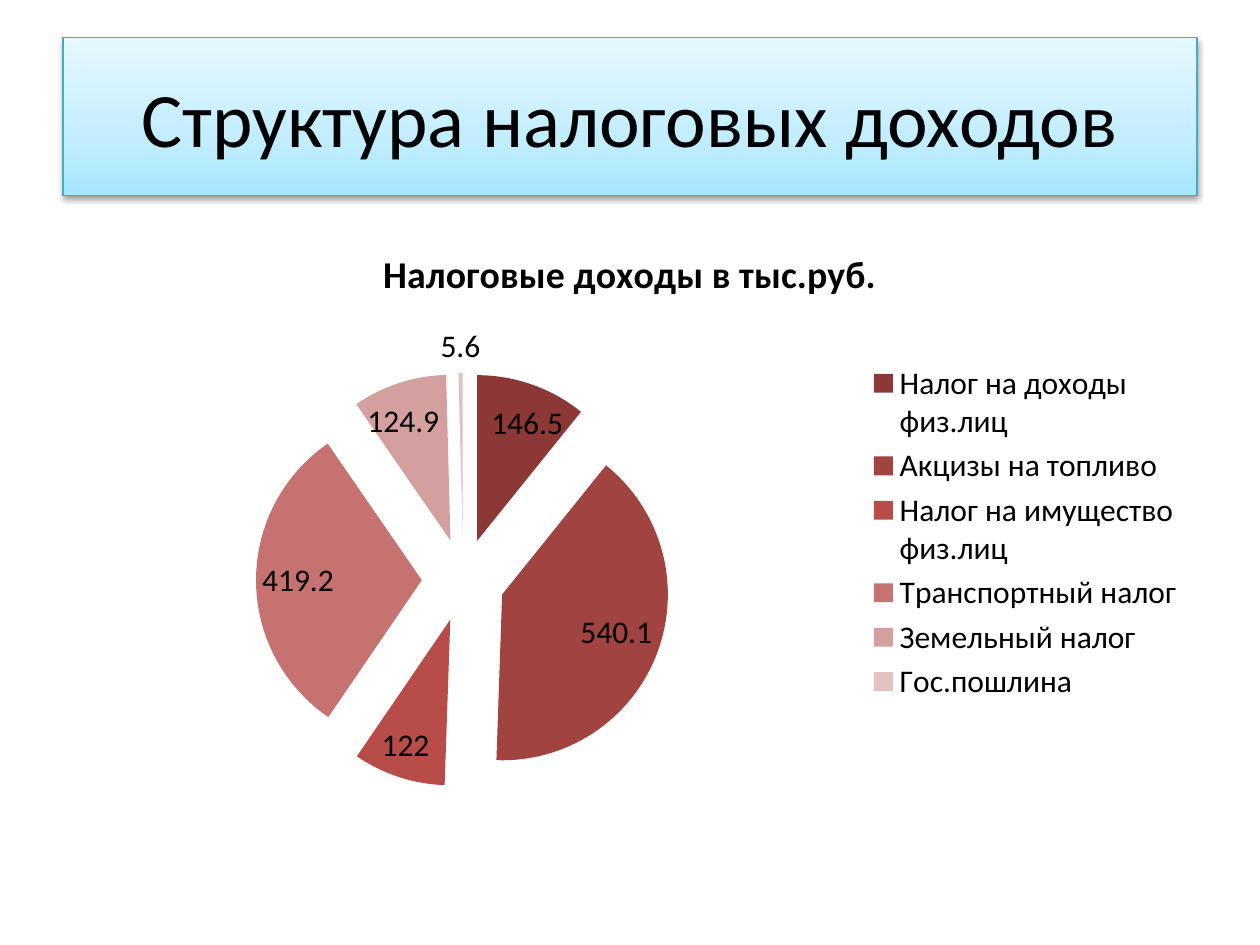
from copy import deepcopy

from lxml.etree import Element, SubElement
from pptx import Presentation
from pptx.chart.data import CategoryChartData
from pptx.dml.color import RGBColor
from pptx.enum.chart import XL_CHART_TYPE as ChartType
from pptx.enum.chart import XL_LABEL_POSITION as LabelPosition
from pptx.enum.chart import XL_LEGEND_POSITION as LegendPosition
from pptx.enum.text import MSO_ANCHOR as Anchor
from pptx.enum.text import PP_ALIGN as Align
from pptx.oxml.ns import qn
from pptx.util import Cm, Pt

FONT = "Calibri"
BLACK = "000000"
SLIDE_WIDTH, SLIDE_HEIGHT = Cm(25.4), Cm(19.05)
MARGIN = Cm(1.27)
CONTENT_WIDTH = SLIDE_WIDTH - 2 * MARGIN

SLIDE_TITLE = "Структура налоговых доходов"
CHART_TITLE = "Налоговые доходы в тыс.руб."
TITLE_GRADIENT = [(0, "A7E6FF"), (0.35, "C1EDFF"), (1, "E7F8FF")]
TITLE_BORDER = "46AAC5"
TAXES = [
    ("Налог на доходы физ.лиц", 146.5, "8C3836"),
    ("Акцизы на топливо", 540.1, "A14340"),
    ("Налог на имущество физ.лиц", 122, "B84C48"),
    ("Транспортный налог", 419.2, "C57270"),
    ("Земельный налог", 124.9, "D3A09F"),
    ("Гос.пошлина", 5.6, "E2C2C1"),
]


def color(value):
    return RGBColor.from_string(value)


def format_font(font, size, bold=False, fill=BLACK):
    font.name = FONT
    font.size = Pt(size)
    font.bold = bold
    font.color.rgb = color(fill)


def write_text(frame, text, size=18, bold=False, align=Align.CENTER):
    paragraph = frame.paragraphs[0]
    paragraph.alignment = align
    run = paragraph.add_run()
    run.text = text
    format_font(run.font, size, bold)


def fill_solid(fill, value):
    fill.solid()
    fill.fore_color.rgb = color(value)


def fill_gradient(shape, stops, angle):
    shape.fill.gradient()
    shape.fill.gradient_angle = angle
    stop_list = shape.element.find(".//" + qn("a:gsLst"))
    while len(stop_list) < len(stops):
        stop_list.append(deepcopy(stop_list[0]))
    for stop, (position, value) in zip(shape.fill.gradient_stops, stops):
        stop.position = position
        stop.color.rgb = color(value)


def add_shadow_below(shape, value, alpha, blur, distance):
    shape.shadow.inherit = False
    effects = shape.element.find(".//" + qn("a:effectLst"))
    shadow = SubElement(effects, qn("a:outerShdw"), blurRad=str(Pt(blur)),
                        dist=str(Pt(distance)), dir="5400000", rotWithShape="0")
    shade = SubElement(shadow, qn("a:srgbClr"), val=value)
    SubElement(shade, qn("a:alpha"), val=str(alpha * 1000))


def separate_slices(chart, percent):
    explosion = Element(qn("c:explosion"), val=str(percent))
    series_name = chart.element.find(".//" + qn("c:ser") + "/" + qn("c:tx"))
    series_name.addnext(explosion)


def place_title(slide, left, top, width, height):
    title = slide.shapes.title
    title.left, title.top, title.width, title.height = left, top, width, height
    fill_gradient(title, TITLE_GRADIENT, angle=90)
    title.line.color.rgb = color(TITLE_BORDER)
    title.line.width = Pt(0.75)
    add_shadow_below(title, BLACK, alpha=38, blur=3.1, distance=1.6)
    title.text_frame.vertical_anchor = Anchor.MIDDLE
    write_text(title.text_frame, SLIDE_TITLE, size=44)


def place_tax_pie(slide, left, top, width, height):
    names, amounts, slice_colors = zip(*TAXES)
    data = CategoryChartData()
    data.categories = names
    data.add_series(CHART_TITLE, amounts)
    chart = slide.shapes.add_chart(ChartType.PIE, left, top, width, height, data).chart
    format_font(chart.font, 18)

    chart.has_title = True
    chart.chart_title.include_in_layout = False
    write_text(chart.chart_title.text_frame, CHART_TITLE, size=21.6, bold=True)

    chart.has_legend = True
    chart.legend.position = LegendPosition.RIGHT
    chart.legend.include_in_layout = False

    plot = chart.plots[0]
    plot.vary_by_categories = True
    plot.has_data_labels = True
    labels = plot.data_labels
    labels.show_value = True
    labels.show_percentage = False
    labels.position = LabelPosition.BEST_FIT

    separate_slices(chart, percent=25)
    points = plot.series[0].points
    for index, slice_color in enumerate(slice_colors):
        fill_solid(points[index].format.fill, slice_color)


def main():
    presentation = Presentation()
    presentation.slide_width, presentation.slide_height = SLIDE_WIDTH, SLIDE_HEIGHT
    title_only = presentation.slide_layouts.get_by_name("Title Only")
    slide = presentation.slides.add_slide(title_only)
    place_title(slide, MARGIN, Cm(0.76), CONTENT_WIDTH, Cm(3.18))
    place_tax_pie(slide, MARGIN, Cm(4.45), CONTENT_WIDTH, Cm(12.57))
    presentation.save("out.pptx")


if __name__ == "__main__":
    main()
